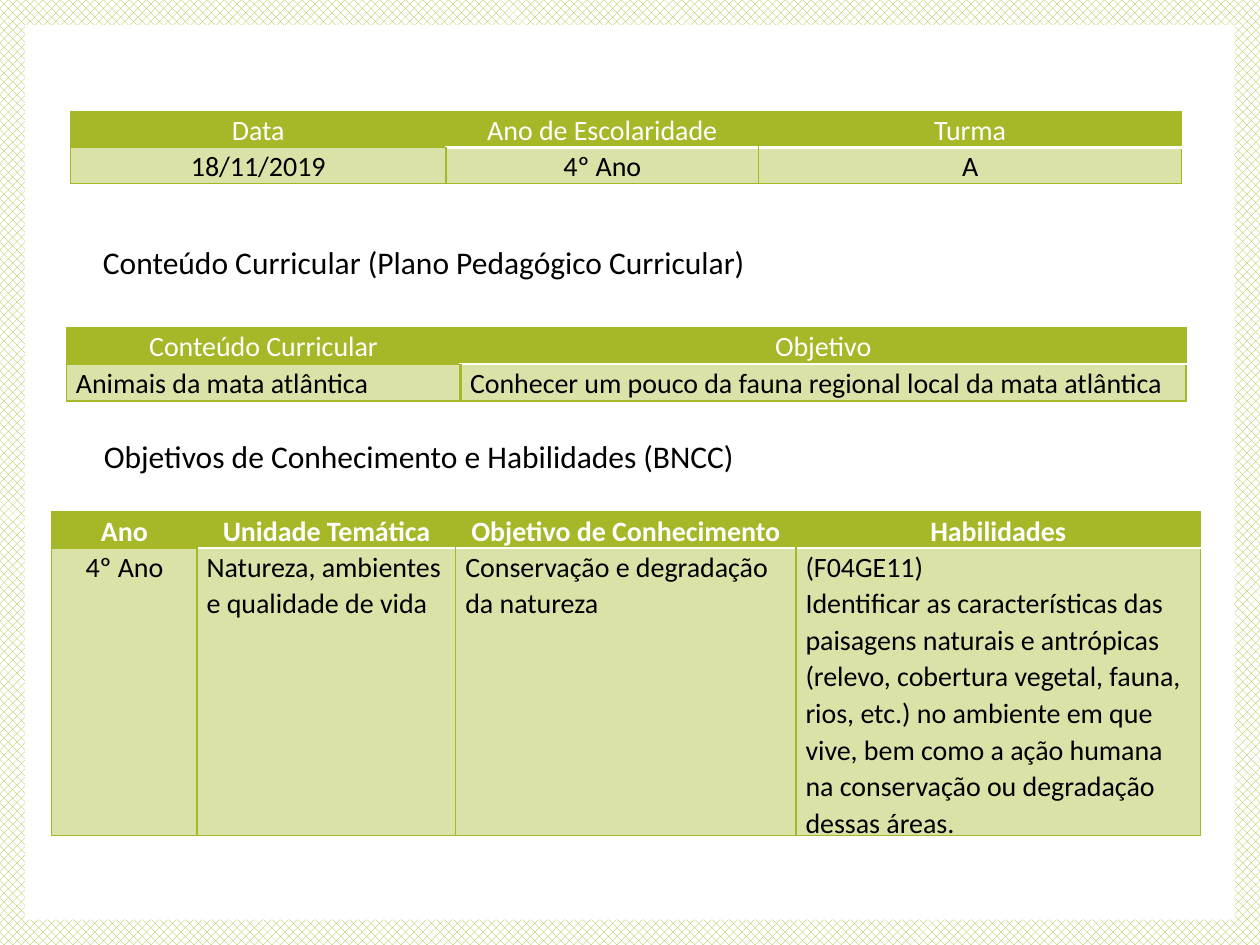
import lxml.etree
import pptx
import pptx.dml.color
import pptx.enum.dml
import pptx.enum.shapes
import pptx.enum.text
import pptx.oxml.ns
import pptx.util

Pt = pptx.util.Pt
qn = pptx.oxml.ns.qn
ALIGN = pptx.enum.text.PP_ALIGN
GREEN, WHITE, BLACK = "A6B727", "FFFFFF", "000000"
PLAIN_TABLE = "{2D5ABB26-0587-4C30-8999-92F81FD0307C}"
THIN, THICK = 0.79, 1.5


def color(value):
    return pptx.dml.color.RGBColor.from_string(value)


class LessonSlide:
    font = "Calibri"
    line_spacing = 1.07
    cell_size = 16
    heading_size = 18
    row_height = 19.8

    def __init__(self, presentation):
        self.slide = presentation.slides.add_slide(presentation.slide_layouts[6])

    def background(self):
        fill = self.slide.background.fill
        fill.patterned()
        fill.pattern = pptx.enum.dml.MSO_PATTERN.PERCENT_50
        fill.fore_color.rgb = color(GREEN)
        fill.back_color.rgb = color(WHITE)

    def panel(self, left, top, width, height):
        shape = self.slide.shapes.add_shape(
            pptx.enum.shapes.MSO_SHAPE.RECTANGLE, Pt(left), Pt(top), Pt(width), Pt(height))
        shape.shadow.inherit = False
        shape.fill.solid()
        shape.fill.fore_color.rgb = color(WHITE)
        shape.line.fill.background()

    def add_text(self, paragraph, runs, align, ink, bold=False):
        paragraph.alignment = align
        paragraph.line_spacing = self.line_spacing
        for text, size in runs:
            run = paragraph.add_run()
            run.text = text
            run.font.name = self.font
            run.font.size = Pt(size)
            run.font.bold = bold
            run.font.color.rgb = color(ink)

    def heading(self, left, top, width, runs, align=ALIGN.LEFT):
        shape = self.slide.shapes.add_textbox(Pt(left), Pt(top), Pt(width), Pt(29.5))
        frame = shape.text_frame
        frame.word_wrap = True
        frame.auto_size = pptx.enum.text.MSO_AUTO_SIZE.SHAPE_TO_FIT_TEXT
        paragraph = frame.paragraphs[0]
        paragraph.space_after = Pt(8)
        self.add_text(paragraph, runs, align, BLACK)

    def borders(self, cell, sides):
        properties = cell._tc.get_or_add_tcPr()
        for side in "LRTB":
            ink, width = sides.get(side, (None, 0))
            line = lxml.etree.SubElement(properties, qn("a:ln" + side), w=str(Pt(width)))
            if ink:
                fill = lxml.etree.SubElement(line, qn("a:solidFill"))
                lxml.etree.SubElement(fill, qn("a:srgbClr"), val=ink)
            else:
                lxml.etree.SubElement(line, qn("a:noFill"))

    def cell_sides(self, header, first, last):
        thin = (GREEN, THIN)
        divider = thin if first else (WHITE, THICK)
        if not header:
            return {"L": thin, "R": (GREEN, THICK) if first else thin, "T": divider, "B": thin}
        sides = {"T": thin, "B": divider}
        if first:
            sides["L"] = thin
        if last:
            sides["R"] = thin
        return sides

    def table(self, left, top, widths, header, body, centered, body_height=row_height, bold=False):
        heights = [self.row_height, body_height]
        shape = self.slide.shapes.add_table(
            2, len(widths), Pt(left), Pt(top), Pt(sum(widths)), Pt(sum(heights)))
        table = shape.table
        table._tbl.tblPr.find(qn("a:tableStyleId")).text = PLAIN_TABLE
        for column, width in zip(table.columns, widths):
            column.width = Pt(width)
        for row, height in zip(table.rows, heights):
            row.height = Pt(height)
        for row_index, texts in enumerate((header, body)):
            is_header = row_index == 0
            for column_index, text in enumerate(texts):
                cell = table.cell(row_index, column_index)
                cell.margin_left = cell.margin_right = Pt(5.4)
                cell.margin_top = cell.margin_bottom = 0
                self.borders(cell, self.cell_sides(
                    is_header, column_index == 0, column_index == len(widths) - 1))
                cell.fill.solid()
                cell.fill.fore_color.rgb = color(GREEN)
                if not is_header:
                    shade = cell._tc.tcPr.find(qn("a:solidFill"))[0]
                    lxml.etree.SubElement(shade, qn("a:alpha"), val="40000")
                middle = is_header or column_index in centered
                for index, line in enumerate(text.split("\n")):
                    frame = cell.text_frame
                    paragraph = frame.add_paragraph() if index else frame.paragraphs[0]
                    self.add_text(paragraph, [(line, self.cell_size)],
                                  ALIGN.CENTER if middle else ALIGN.LEFT,
                                  WHITE if is_header else BLACK, bold and is_header)


def main():
    presentation = pptx.Presentation()
    presentation.slide_width = Pt(720)
    presentation.slide_height = Pt(540)
    lesson = LessonSlide(presentation)
    lesson.background()
    lesson.panel(14.4, 14.4, 691.2, 511.2)
    lesson.table(38, 187.2, [225.2, 414.5],
                 ["Conteúdo Curricular", "Objetivo"],
                 ["Animais da mata atlântica",
                  "Conhecer um pouco da fauna regional local da mata atlântica"], ())
    lesson.heading(40.3, 133.9, 400.3,
                   [(" ", lesson.cell_size),
                    ("Conteúdo Curricular (Plano Pedagógico Curricular)", lesson.heading_size)],
                   ALIGN.CENTER)
    lesson.table(40.3, 63.8, [214.6, 178.6, 241.9],
                 ["Data", "Ano de Escolaridade", "Turma"],
                 ["18/11/2019", "4º Ano", "A"], (0, 1, 2))
    lesson.heading(48.2, 244.8, 510.5,
                   [(" Objetivos de Conhecimento e Habilidades (BNCC)", lesson.heading_size)])
    lesson.table(29.5, 292.6, [83.2, 147.8, 194.4, 231.1],
                 ["Ano", "Unidade Temática", "Objetivo de Conhecimento", "Habilidades"],
                 ["4º Ano", "Natureza, ambientes e qualidade de vida",
                  "Conservação e degradação da natureza",
                  "(F04GE11)\nIdentificar as características das paisagens naturais e "
                  "antrópicas (relevo, cobertura vegetal, fauna, rios, etc.) no ambiente em "
                  "que vive, bem como a ação humana na conservação ou degradação dessas áreas."],
                 (0,), body_height=164, bold=True)
    presentation.save("out.pptx")


if __name__ == "__main__":
    main()
